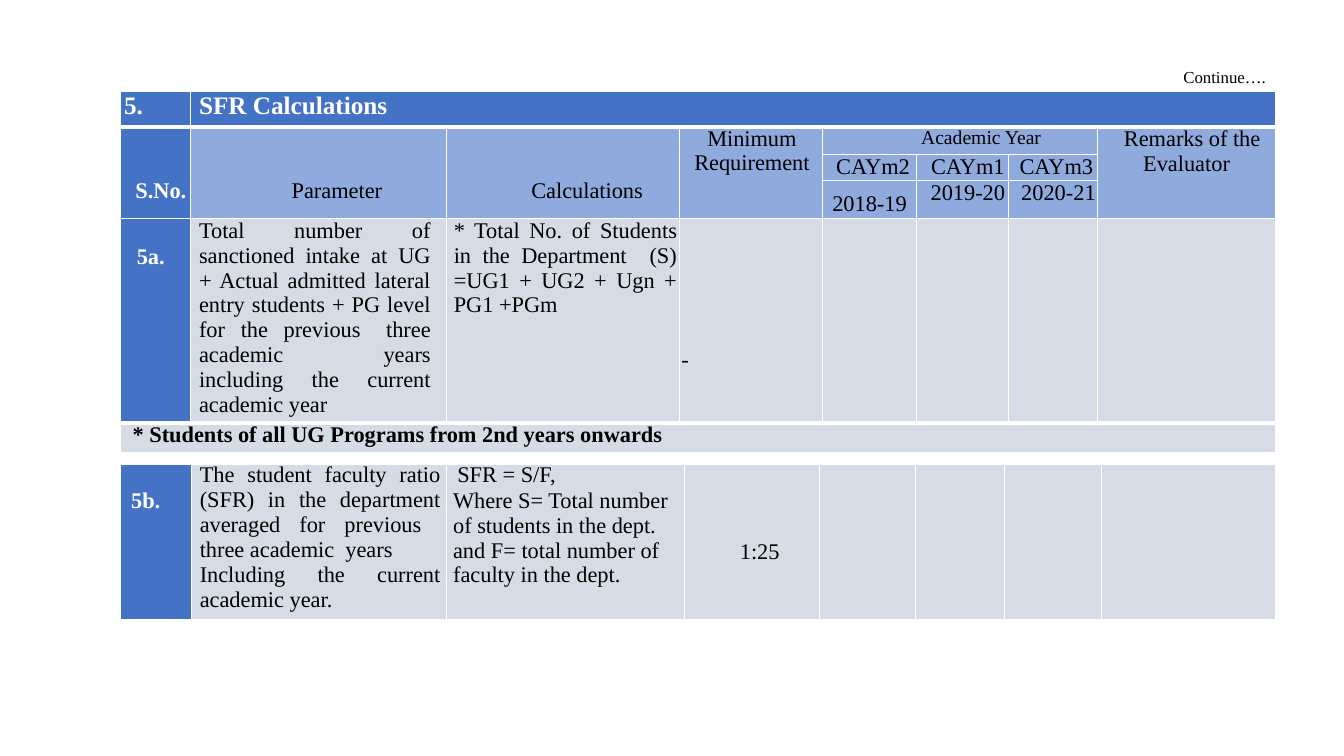
import pptx
import pptx.dml.color
import pptx.enum.text
import pptx.oxml
import pptx.util
from pptx.oxml.ns import nsdecls

Pt = pptx.util.Pt
RGBColor = pptx.dml.color.RGBColor
ALIGN = pptx.enum.text.PP_ALIGN
LEFT, CENTER, RIGHT, JUSTIFY = ALIGN.LEFT, ALIGN.CENTER, ALIGN.RIGHT, ALIGN.JUSTIFY

BLACK = RGBColor(0x00, 0x00, 0x00)
WHITE = RGBColor(0xFF, 0xFF, 0xFF)
BLUE = RGBColor(0x44, 0x72, 0xC4)
MID_BLUE = RGBColor(0x8F, 0xAA, 0xDC)
PALE = RGBColor(0xD6, 0xDC, 0xE5)
FONT = "Times New Roman"
LINE = 18.4  # height of one 16 pt text line
HEADING = dict(size=18, bold=True, color=WHITE)
NUMBER = dict(bold=True, color=WHITE)

CONTINUED = "Continue…."

# Each entry: (row, column): (text, format)
CALCULATIONS = {
    (0, 0): ("5.", dict(HEADING, left=3)),
    (0, 1): ("SFR Calculations", dict(HEADING, left=6)),
    (1, 0): ("S.No.", dict(NUMBER, align=CENTER, left=8, top=2 * LINE)),
    (1, 1): ("Parameter", dict(align=CENTER, left=26, top=2 * LINE)),
    (1, 2): ("Calculations", dict(align=CENTER, left=34, top=2 * LINE)),
    (1, 3): ("Minimum Requirement", dict(align=CENTER, left=1, spacing=0.98)),
    (1, 4): ("Academic Year", dict(size=14, align=CENTER, left=30)),
    (1, 7): ("Remarks of the Evaluator", dict(align=CENTER, first=8)),
    (2, 4): ("CAYm2", dict(align=CENTER, left=5)),
    (2, 5): ("CAYm1", dict(align=CENTER, left=8)),
    (2, 6): ("CAYm3", dict(align=CENTER, left=5)),
    (3, 4): ("2018-19", dict(align=CENTER, top=8)),
    (3, 5): ("2019-20", dict(align=CENTER, left=8)),
    (3, 6): ("2020-21", dict(align=CENTER, left=8)),
    (4, 0): ("5a.", dict(NUMBER, left=12, top=LINE)),
    (4, 1): ("Total number of sanctioned intake at UG + Actual admitted lateral entry "
             "students + PG level for the previous\t three academic\t years including "
             "the current academic year",
             dict(align=JUSTIFY, left=6, right=11.5, tabs=(45, 60, 65, 76, 78))),
    (4, 2): ("* Total No. of Students in the Department  (S) =UG1 + UG2 + Ugn + PG1 +PGm",
             dict(align=JUSTIFY, left=5, right=2)),
    (4, 3): ("-", dict(left=1, top=5 * LINE)),
    (5, 0): ("* Students of all UG Programs from 2nd years onwards",
             dict(bold=True, left=9)),
}
RATIO = {
    (0, 0): ("5b.", dict(NUMBER, left=8, top=LINE)),
    (0, 1): ("The student faculty ratio (SFR) in the department averaged for "
             "previous  three academic  years\nIncluding the current academic year.",
             dict(align=JUSTIFY, left=6, right=4)),
    (0, 2): ("SFR = S/F,\nWhere S= Total number of students in the dept. "
             "and F= total number of faculty in the dept.", dict(left=5, first=3)),
    (0, 3): ("1:25", dict(align=CENTER, left=11.5, top=3 * LINE)),
}

CALCULATION_COLUMNS = (50.5, 183, 166.5, 102, 67, 65.5, 64, 127)
CALCULATION_ROWS = (25, 20, 18.5, 27, 146, 21.5)
RATIO_COLUMNS = (51, 182, 170, 96.5, 69, 63.5, 69, 124.5)
RATIO_ROWS = (113,)
# (first row, first column, last row, last column)
MERGES = [(0, 1, 0, 7), (1, 4, 1, 6), (5, 0, 5, 7)]
MERGES += [(1, column, 3, column) for column in (0, 1, 2, 3, 7)]
TABLE_LEFT = 85.7


def write(frame, text, size=16, bold=False, color=BLACK, align=LEFT,
          left=0, first=0, spacing=None, tabs=()):
    """Fill a text frame; each line of text is a paragraph, first indents line one."""
    frame.word_wrap = True
    for index, line in enumerate(text.split("\n")):
        paragraph = frame.add_paragraph() if index else frame.paragraphs[0]
        paragraph.alignment = align
        paragraph.space_before = Pt(0.5 if index else 0)
        if spacing:
            paragraph.line_spacing = spacing
        properties = paragraph._p.get_or_add_pPr()
        properties.set("marL", str(Pt(left)))
        properties.set("indent", str(Pt(0 if index else first)))
        if tabs:
            stops = "".join(f'<a:tab pos="{Pt(tab)}" algn="l"/>' for tab in tabs)
            properties.append(pptx.oxml.parse_xml(
                f'<a:tabLst {nsdecls("a")}>{stops}</a:tabLst>'))
        run = paragraph.add_run()
        run.text = line
        run.font.name = FONT
        run.font.size = Pt(size)
        run.font.bold = bold
        run.font.color.rgb = color


def set_borders(cell, top, bottom):
    properties = cell._tc.get_or_add_tcPr()
    widths = {"lnL": 1, "lnR": 1, "lnT": top, "lnB": bottom}
    for index, (side, width) in enumerate(widths.items()):
        properties.insert(index, pptx.oxml.parse_xml(
            f'<a:{side} {nsdecls("a")} w="{Pt(width)}"><a:solidFill>'
            f'<a:srgbClr val="{WHITE}"/></a:solidFill></a:{side}>'))


def add_grid(slide, top, columns, rows, contents, fill_of, thick_edges, merges=()):
    """Add a table; thick_edges are the row boundaries ruled at 3 pt."""
    grid = slide.shapes.add_table(len(rows), len(columns), Pt(TABLE_LEFT), Pt(top),
                                  Pt(sum(columns)), Pt(sum(rows))).table
    grid.first_row = grid.horz_banding = False
    for column, width in zip(grid.columns, columns):
        column.width = Pt(width)
    for row, height in zip(grid.rows, rows):
        row.height = Pt(height)
    for r0, c0, r1, c1 in merges:
        grid.cell(r0, c0).merge(grid.cell(r1, c1))
    for r in range(len(rows)):
        for c in range(len(columns)):
            cell = grid.cell(r, c)
            text, style = contents.get((r, c), ("", {}))
            style = dict(style)
            cell.margin_left = cell.margin_bottom = 0
            cell.margin_top = Pt(style.pop("top", 0))
            cell.margin_right = Pt(style.pop("right", 0))
            cell.fill.solid()
            cell.fill.fore_color.rgb = fill_of(r, c)
            set_borders(cell, *(3 if edge in thick_edges else 1 for edge in (r, r + 1)))
            if text:
                write(cell.text_frame, text, **style)


def calculation_fill(row, column):
    if row == 0 or (column == 0 and row < 5):
        return BLUE
    return MID_BLUE if row < 4 else PALE


def ratio_fill(row, column):
    return PALE if column else BLUE


def main():
    deck = pptx.Presentation()
    deck.slide_width, deck.slide_height = Pt(960), Pt(540)
    slide = deck.slides.add_slide(deck.slide_layouts[5])

    title = slide.shapes.title
    title.left, title.top, title.width, title.height = Pt(66), Pt(29), Pt(845.5), Pt(54)
    title.text_frame.vertical_anchor = pptx.enum.text.MSO_ANCHOR.MIDDLE
    write(title.text_frame, CONTINUED, size=12, align=RIGHT, spacing=0.9)

    add_grid(slide, 65.5, CALCULATION_COLUMNS, CALCULATION_ROWS, CALCULATIONS,
             calculation_fill, thick_edges=(1, 5), merges=MERGES)
    add_grid(slide, 330.5, RATIO_COLUMNS, RATIO_ROWS, RATIO,
             ratio_fill, thick_edges=(0, 1))
    deck.save("out.pptx")


if __name__ == "__main__":
    main()
